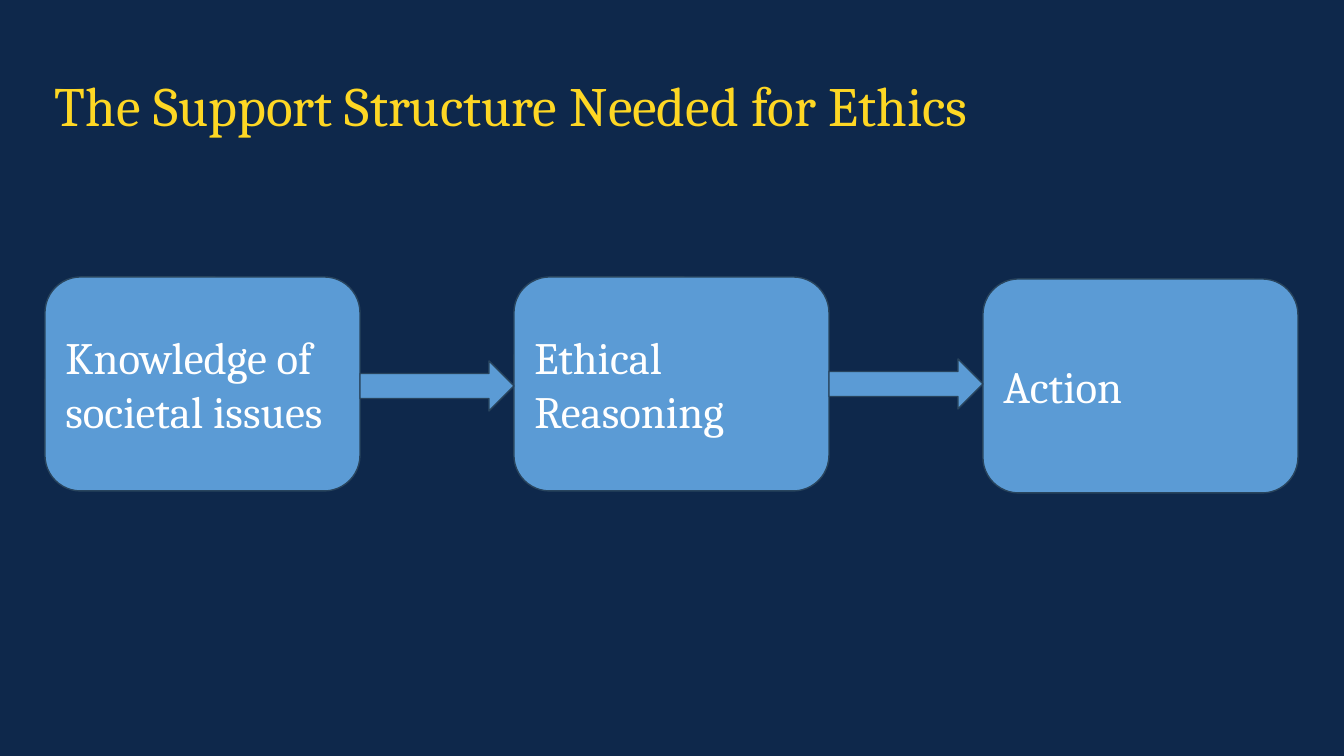
from dataclasses import dataclass
from pptx import Presentation
from pptx.dml.color import RGBColor as RGB
from pptx.enum.shapes import MSO_SHAPE as Kind
from pptx.enum.text import MSO_ANCHOR as Anchor, PP_ALIGN as Align
from pptx.util import Emu, Inches, Pt

SCALE = 914400 / 100.8


@dataclass(frozen=True)
class Theme:
    font: str = "Cambria"
    back: str = "0E284B"
    gold: str = "FED724"
    white: str = "FFFFFF"
    blue: str = "5B9BD5"
    edge: str = "28445D"
    head: float = 39.6
    body: float = 32


class Deck:
    def __init__(self, theme, wide, high):
        self.theme = theme
        self.show = Presentation()
        self.show.slide_width, self.show.slide_height = self.px(wide, high)
        self.slide = self.show.slides.add_slide(self.show.slide_layouts[6])
        fill = self.slide.background.fill
        fill.solid()
        fill.fore_color.rgb = RGB.from_string(theme.back)

    def px(self, *sizes):
        return [Emu(round(size * SCALE)) for size in sizes]

    def label(self, shape, text, size, color):
        frame = shape.text_frame
        frame.text = text
        frame.word_wrap = True
        frame.vertical_anchor = Anchor.MIDDLE
        para = frame.paragraphs[0]
        para.alignment = Align.LEFT
        font = para.runs[0].font
        font.name = self.theme.font
        font.size = Pt(size)
        font.color.rgb = RGB.from_string(color)
        return frame

    def title(self, text, *place):
        box = self.slide.shapes.add_textbox(*self.px(*place))
        frame = self.label(box, text, self.theme.head, self.theme.gold)
        frame.margin_top = frame.margin_bottom = Inches(0.1)
        frame.paragraphs[0].line_spacing = 0.9

    def block(self, kind, *place):
        shape = self.slide.shapes.add_shape(kind, *self.px(*place))
        shape.shadow.inherit = False
        shape.fill.solid()
        shape.fill.fore_color.rgb = RGB.from_string(self.theme.blue)
        shape.line.color.rgb = RGB.from_string(self.theme.edge)
        shape.line.width = Pt(1)
        return shape

    def card(self, text, *place):
        shape = self.block(Kind.ROUNDED_RECTANGLE, *place)
        self.label(shape, text, self.theme.body, self.theme.white)

    def arrow(self, *place):
        self.block(Kind.RIGHT_ARROW, *place)


def main():
    deck = Deck(Theme(), 1344, 756)
    left, step, wide, high = 45, 469, 315, 214
    deck.title("The Support Structure Needed for Ethics", left, 66, 1252, 85)

    cards = [
        ("Knowledge of societal issues", 277),
        ("Ethical Reasoning", 277),
        ("Action", 279),
    ]
    for spot, (text, top) in enumerate(cards):
        deck.card(text, left + spot * step, top, wide, high)
    for spot, top in enumerate((361, 359)):
        deck.arrow(left + spot * step + wide, top, step - wide, 50)

    deck.show.save("out.pptx")


if __name__ == "__main__":
    main()
